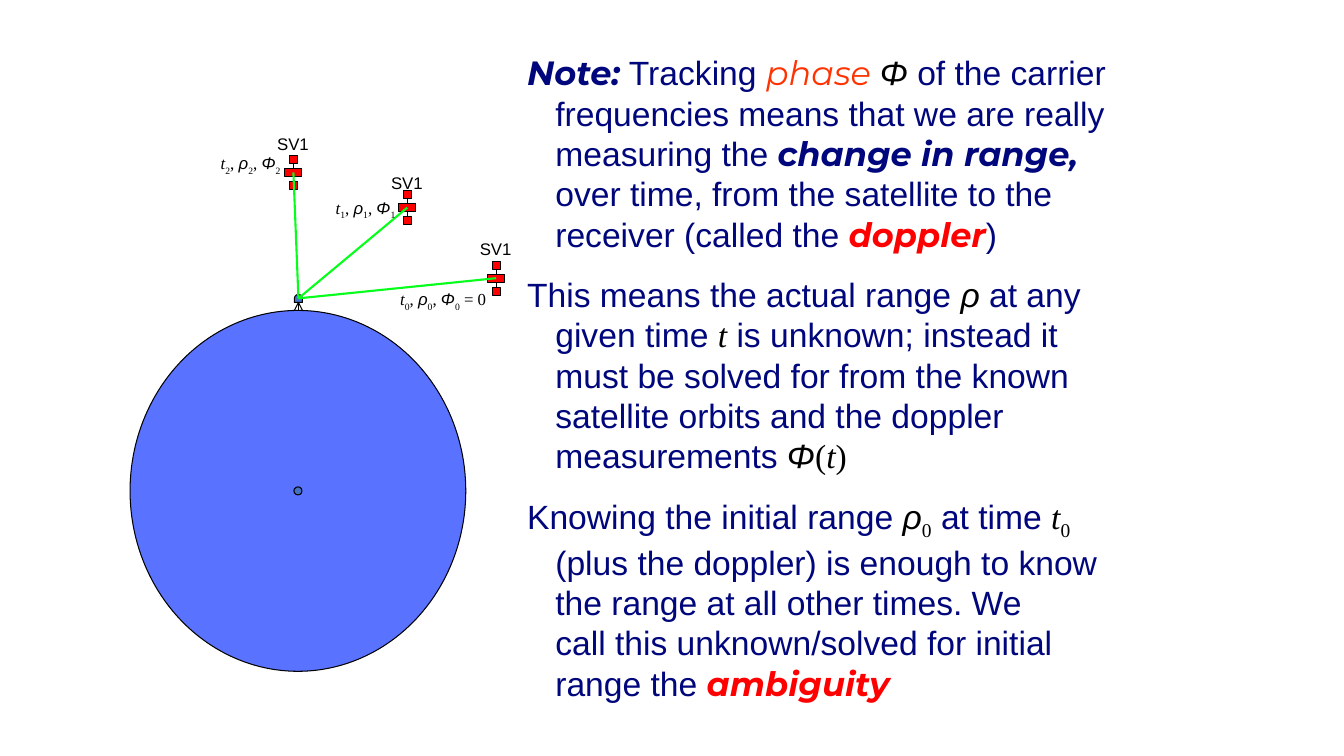
"""Build the slide on tracking carrier phase from one satellite at three epochs."""
from lxml import etree
from pptx import Presentation
from pptx.dml.color import RGBColor
from pptx.enum.shapes import MSO_CONNECTOR, MSO_SHAPE
from pptx.enum.text import MSO_AUTO_SIZE
from pptx.oxml.ns import qn
from pptx.util import Inches, Pt

STRAIGHT = MSO_CONNECTOR.STRAIGHT
RECTANGLE, ELLIPSE, DELAY = MSO_SHAPE.RECTANGLE, MSO_SHAPE.OVAL, MSO_SHAPE.FLOWCHART_DELAY
FIT_SHAPE = MSO_AUTO_SIZE.SHAPE_TO_FIT_TEXT
TOP, BOTTOM = 0, 2

NAVY, BLACK, RED, ORANGE = "00067B", "000000", "FF0000", "FF3300"
EARTH_BLUE, MARK_BLUE, BEAM_GREEN = "5972FF", "4472C4", "05FF1A"
ARIAL, MONTSERRAT, TIMES = "Arial", "Montserrat", "Times New Roman"

# style: font, colour, bold, italic, baseline
STYLES = {
    "plain": (ARIAL, NAVY, False, False, 0),
    "strong": (MONTSERRAT, NAVY, True, True, 0),
    "alert": (MONTSERRAT, RED, True, True, 0),
    "term": (MONTSERRAT, ORANGE, False, True, 0),
    "name": (ARIAL, BLACK, False, False, 0),
    "greek": (ARIAL, BLACK, False, True, 0),
    "time": (TIMES, BLACK, False, True, 0),
    "math": (TIMES, BLACK, False, False, 0),
    "sub": (TIMES, BLACK, False, False, -25000),
}

NOTES = [
    [
        [("strong", "Note:"), ("plain", " Tracking "), ("term", "phase "),
         ("greek", "Φ"), ("plain", " of the carrier")],
        [("plain", "frequencies means that we are really")],
        [("plain", "measuring the "), ("strong", "change in range,")],
        [("plain", "over time, from the satellite to the")],
        [("plain", "receiver (called the "), ("alert", "doppler"), ("plain", ")")],
    ],
    [
        [("plain", "This means the actual range "), ("greek", "ρ"), ("plain", " at any")],
        [("plain", "given time "), ("time", "t"), ("plain", " is unknown; instead it")],
        [("plain", "must be solved for from the known")],
        [("plain", "satellite orbits and the doppler")],
        [("plain", "measurements "), ("greek", "Φ"), ("math", "("), ("time", "t"), ("math", ")")],
    ],
    [
        [("plain", "Knowing the initial range "), ("greek", "ρ"), ("sub", "0"),
         ("plain", " at time "), ("time", "t"), ("sub", "0")],
        [("plain", "(plus the doppler) is enough to know")],
        [("plain", "the range at all other times. We")],
        [("plain", "call this unknown/solved for initial")],
        [("plain", "range the "), ("alert", "ambiguity")],
    ],
]
NOTE_GAPS = [0, 14.4, 18.4]
NOTE_BOX = (5.13, 0.47, 6.09, 6.56)
NOTE_SIZE, NOTE_PITCH, HANGING = 24, 28.8, 0.28

# epoch: satellite centre, name position, measurement box (left, top, width), ending
EPOCHS = [
    ("0", (4.92, 2.76), (4.66, 2.32), (3.87, 2.82, 1.07), " = 0"),
    ("1", (4.04, 2.06), (3.78, 1.66), (3.23, 1.91, 0.81), ""),
    ("2", (2.91, 1.71), (2.65, 1.28), (2.09, 1.47, 0.81), ""),
]
LABEL_SIZE, LABEL_HEIGHT, NAME_WIDTH = 12, 0.3, 0.52

EARTH_BOX = (1.29, 3.08, 3.33, 3.58)
MARK = 0.08
BODY_WIDTH, PANEL_OFFSET = 0.17, 0.13
RECEIVER = (2.96, 2.96)


def color(value):
    return RGBColor.from_string(value)


def add_outlined(shapes, kind, center, size, fill):
    width, height = size
    left, top = center[0] - width / 2, center[1] - height / 2
    shape = shapes.add_shape(kind, *map(Inches, (left, top, width, height)))
    shape.shadow.inherit = False
    shape.fill.solid()
    shape.fill.fore_color.rgb = color(fill)
    shape.line.color.rgb = color(BLACK)
    shape.line.width = Pt(0.75)
    return shape


def add_line(shapes, start, end, stroke=BLACK, width=0.75):
    line = shapes.add_connector(STRAIGHT, *map(Inches, (*start, *end)))
    line.line.color.rgb = color(stroke)
    line.line.width = Pt(width)
    etree.SubElement(line._element.spPr, qn("a:effectLst"))
    return line


def add_runs(paragraph, runs, size):
    for style, text in runs:
        font_name, ink, bold, italic, baseline = STYLES[style]
        run = paragraph.add_run()
        run.text = text
        run.font.name = font_name
        run.font.size = Pt(size)
        run.font.bold = bold
        run.font.italic = italic
        run.font.color.rgb = color(ink)
        if baseline:
            run._r.get_or_add_rPr().set("baseline", str(baseline))


def add_label(slide, left, top, width, runs):
    box = slide.shapes.add_textbox(*map(Inches, (left, top, width, LABEL_HEIGHT)))
    box.text_frame.word_wrap = False
    box.text_frame.auto_size = FIT_SHAPE
    add_runs(box.text_frame.paragraphs[0], runs, LABEL_SIZE)


def add_earth(slide):
    left, top, width, height = EARTH_BOX
    center = (left + width / 2, top + height / 2)
    add_outlined(slide.shapes, ELLIPSE, center, (width, height), EARTH_BLUE)
    add_outlined(slide.shapes, ELLIPSE, center, (MARK, MARK), MARK_BLUE)


def add_satellite(slide, center):
    shapes = slide.shapes.add_group_shape().shapes
    x, y = center
    upper, lower = [
        add_outlined(shapes, RECTANGLE, (x, y + shift), (MARK, MARK), RED)
        for shift in (-PANEL_OFFSET, PANEL_OFFSET)
    ]
    mast = add_line(shapes, center, center)
    mast.begin_connect(upper, BOTTOM)
    mast.end_connect(lower, TOP)
    add_outlined(shapes, RECTANGLE, center, (BODY_WIDTH, MARK), RED)


def add_receiver(slide):
    shapes = slide.shapes.add_group_shape().shapes
    x, y = RECEIVER
    dome = add_outlined(shapes, DELAY, RECEIVER, (MARK, MARK), MARK_BLUE)
    dome.rotation = 271
    base = y + MARK / 2
    for shift in (MARK / 2, -MARK / 2, 0):
        add_line(shapes, (x, base), (x + shift, base + MARK))


def add_notes(slide):
    box = slide.shapes.add_textbox(*map(Inches, NOTE_BOX))
    frame = box.text_frame
    frame.word_wrap = True
    for index, (lines, gap) in enumerate(zip(NOTES, NOTE_GAPS)):
        paragraph = frame.add_paragraph() if index else frame.paragraphs[0]
        paragraph.line_spacing = Pt(NOTE_PITCH)
        paragraph.space_before = Pt(gap)
        properties = paragraph._p.get_or_add_pPr()
        properties.set("marL", str(Inches(HANGING)))
        properties.set("indent", str(-Inches(HANGING)))
        for number, runs in enumerate(lines):
            if number:
                paragraph.add_line_break()
            add_runs(paragraph, runs, NOTE_SIZE)


def main():
    presentation = Presentation()
    presentation.slide_width, presentation.slide_height = Inches(13.33), Inches(7.5)
    slide = presentation.slides.add_slide(presentation.slide_layouts[6])
    add_earth(slide)
    for epoch in EPOCHS:
        add_satellite(slide, epoch[1])
    add_receiver(slide)
    add_notes(slide)
    for number, center, name_corner, measure_box, ending in EPOCHS:
        add_line(slide.shapes, RECEIVER, center, BEAM_GREEN, 1.5)
        add_label(slide, *name_corner, NAME_WIDTH, [("name", "SV1")])
        runs = [("time", "t"), ("sub", number), ("math", ", "), ("greek", "ρ"),
                ("sub", number), ("math", ", "), ("greek", "Φ"), ("sub", number)]
        if ending:
            runs.append(("math", ending))
        add_label(slide, *measure_box, runs)
    presentation.save("out.pptx")


if __name__ == "__main__":
    main()
